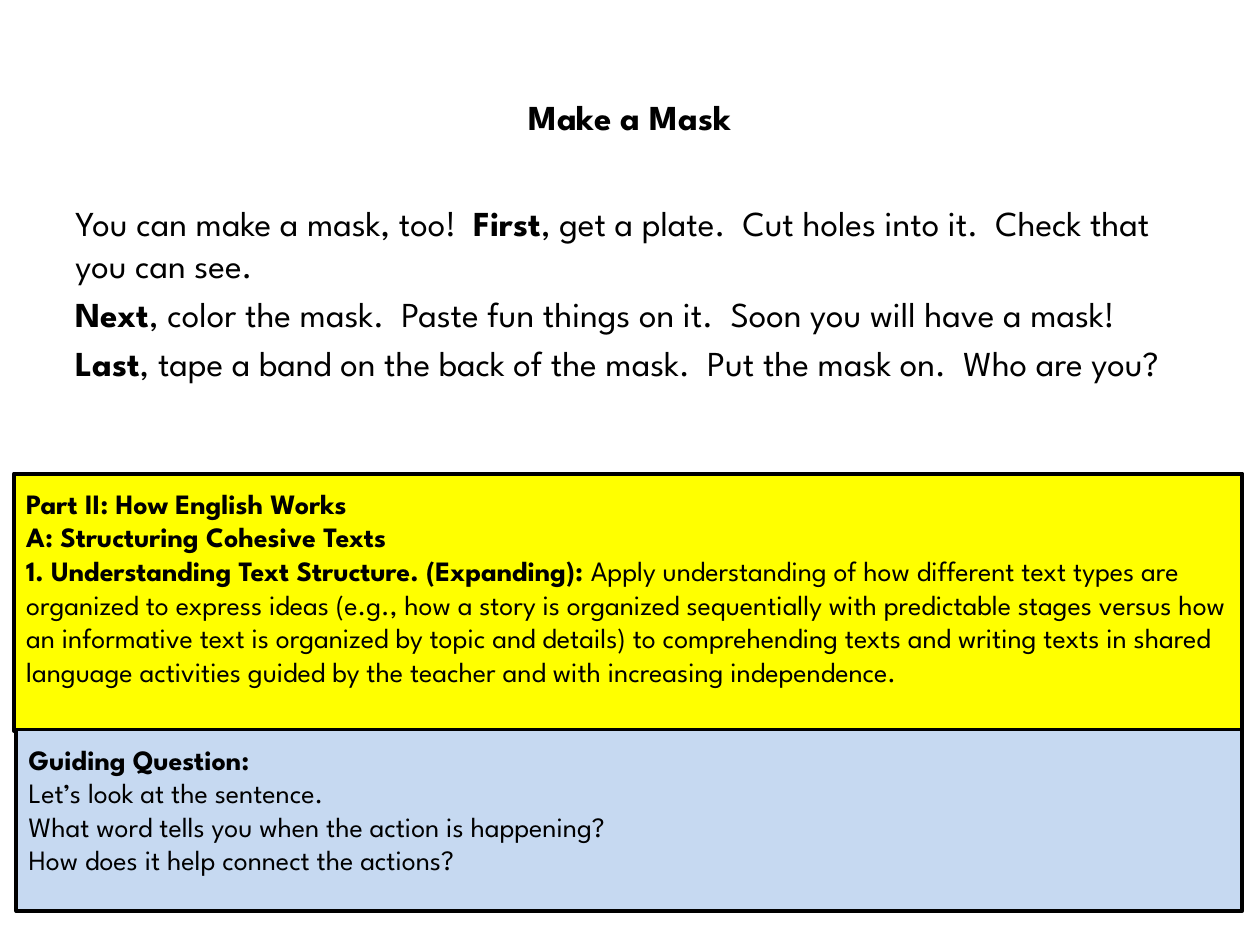
from dataclasses import dataclass

from pptx import Presentation
from pptx.dml.color import RGBColor
from pptx.enum.shapes import MSO_SHAPE
from pptx.enum.text import MSO_ANCHOR, PP_ALIGN
from pptx.util import Pt

SCALE = 9144


def px(count):
    """Turn px, 100 to the inch, into EMU."""
    return count * SCALE


@dataclass(frozen=True)
class Theme:
    """Hold the colours, font and type sizes."""
    font: str = "League Spartan"
    ink: str = "000000"
    yellow: str = "FFFF00"
    blue: str = "C6D9F1"
    large: int = 20
    small: int = 16
    border: float = 2.25


def write(frame, lines, theme, size, align=PP_ALIGN.LEFT,
          anchor=MSO_ANCHOR.TOP, before=0, inset=(10, 10)):
    """Fill a frame with lines whose **marked** parts are bold."""
    frame.word_wrap = True
    frame.vertical_anchor = anchor
    frame.margin_left = frame.margin_right = px(inset[0])
    frame.margin_top = frame.margin_bottom = px(inset[1])
    for index, line in enumerate(lines):
        para = frame.add_paragraph() if index else frame.paragraphs[0]
        para.alignment = align
        para.space_before = Pt(before)
        for place, part in enumerate(line.split("**")):
            if part:
                run = para.add_run()
                run.text = part
                run.font.name = theme.font
                run.font.size = Pt(size)
                run.font.bold = place % 2 == 1
                run.font.color.rgb = RGBColor.from_string(theme.ink)


class Deck:
    """Hold the style and the current slide."""

    def __init__(self, theme):
        """Start a deck with one blank slide."""
        self.theme = theme
        self.file = Presentation()
        self.file.slide_width, self.file.slide_height = px(1000), px(750)
        self.slide = self.file.slides.add_slide(self.file.slide_layouts[6])

    def text(self, area, lines, **style):
        """Add a plain text box in large type."""
        box = self.slide.shapes.add_textbox(*map(px, area))
        write(box.text_frame, lines, self.theme, self.theme.large,
              inset=(10, 5), **style)

    def panel(self, area, fill, lines):
        """Add a filled, bordered panel in small type."""
        box = self.slide.shapes.add_shape(MSO_SHAPE.RECTANGLE, *map(px, area))
        box.shadow.inherit = False
        box.fill.solid()
        box.fill.fore_color.rgb = RGBColor.from_string(fill)
        box.line.color.rgb = RGBColor.from_string(self.theme.ink)
        box.line.width = Pt(self.theme.border)
        write(box.text_frame, lines, self.theme, self.theme.small)


def main():
    """Build and save the mask lesson slide."""
    theme = Theme()
    deck = Deck(theme)
    deck.text((50, 155, 900, 495), [
        "You can make a mask, too!  **First**, get a plate.  Cut holes into it.  "
        "Check that you can see.",
        "**Next**, color the mask.  Paste fun things on it.  "
        "Soon you will have a mask!",
        "**Last**, tape a band on the back of the mask.  Put the mask on.  "
        "Who are you?",
    ], before=4)
    deck.text((50, 30, 900, 125), ["**Make a Mask**"],
              align=PP_ALIGN.CENTER, anchor=MSO_ANCHOR.MIDDLE)
    deck.panel((11, 376, 975, 204), theme.yellow, [
        "**Part II: How English Works**",
        "**A: Structuring Cohesive Texts**",
        "**1. Understanding Text Structure. (Expanding): **"
        "Apply understanding of how different text types are organized to "
        "express ideas (e.g., how a story is organized sequentially with "
        "predictable stages versus how an informative text is organized by "
        "topic and details) to comprehending texts and writing texts in shared "
        "language activities guided by the teacher and with increasing "
        "independence.",
    ])
    deck.panel((13, 579, 973, 144), theme.blue, [
        "**Guiding Question:**",
        "Let’s look at the sentence.",
        "What word tells you when the action is happening?",
        "How does it help connect the actions?",
    ])
    deck.file.save("out.pptx")


if __name__ == "__main__":
    main()
